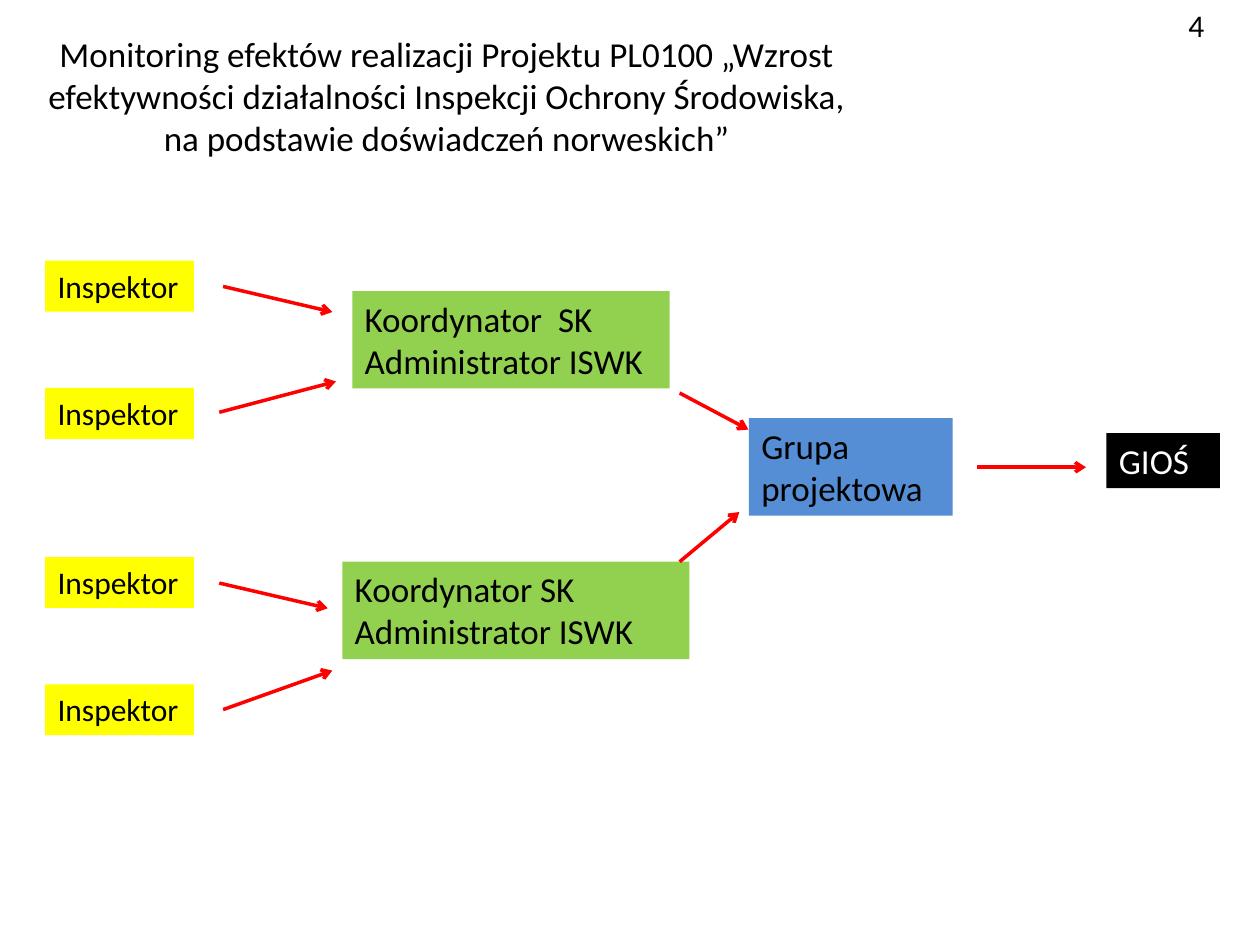
from dataclasses import dataclass

from lxml import etree
from pptx import Presentation
from pptx.dml.color import RGBColor
from pptx.enum.shapes import MSO_CONNECTOR, MSO_SHAPE
from pptx.enum.text import MSO_ANCHOR, MSO_AUTO_SIZE, PP_ALIGN
from pptx.oxml.ns import qn
from pptx.util import Pt

RECTANGLE = MSO_SHAPE.RECTANGLE
STRAIGHT = MSO_CONNECTOR.STRAIGHT
TOP = MSO_ANCHOR.TOP
GROW = MSO_AUTO_SIZE.SHAPE_TO_FIT_TEXT
LEFT, CENTER = PP_ALIGN.LEFT, PP_ALIGN.CENTER


@dataclass(frozen=True)
class Theme:
    font: str = "Calibri"
    large: int = 20
    small: int = 18
    arrow_width: int = 2
    black: str = "000000"
    white: str = "FFFFFF"
    inspector: str = "FFFF00"
    coordinator: str = "92D050"
    group: str = "558ED5"
    arrow: str = "FF0000"


THEME = Theme()


def write_lines(box, lines, size, color, align=LEFT):
    frame = box.text_frame
    frame.word_wrap = True
    frame.vertical_anchor = TOP
    frame.text = "\n".join(lines)
    for para in frame.paragraphs:
        para.alignment = align
        para.font.name = THEME.font
        para.font.size = Pt(size)
        para.font.color.rgb = RGBColor.from_string(color)


def add_label(page, bounds, text, size, align=LEFT):
    box = page.shapes.add_textbox(*map(Pt, bounds))
    write_lines(box, [text], size, THEME.black, align)


def add_role(page, bounds, lines, fill, size=THEME.large, color=THEME.black):
    box = page.shapes.add_shape(RECTANGLE, *map(Pt, bounds))
    box.shadow.inherit = False
    box.fill.solid()
    box.fill.fore_color.rgb = RGBColor.from_string(fill)
    box.line.fill.background()
    write_lines(box, lines, size, color)
    box.text_frame.auto_size = GROW


def add_arrow(page, start, end):
    arrow = page.shapes.add_connector(STRAIGHT, *map(Pt, (*start, *end)))
    arrow.line.width = Pt(THEME.arrow_width)
    arrow.line.color.rgb = RGBColor.from_string(THEME.arrow)
    etree.SubElement(arrow.line._get_or_add_ln(), qn("a:tailEnd"), type="arrow")
    etree.SubElement(arrow._element.spPr, qn("a:effectLst"))


def main():
    deck = Presentation()
    deck.slide_width, deck.slide_height = Pt(720), Pt(540)
    page = deck.slides.add_slide(deck.slide_layouts[6])

    # Title and page number
    add_label(
        page, (8.5, 15, 493.5, 102),
        "Monitoring efektów realizacji Projektu PL0100 „Wzrost efektywności "
        "działalności Inspekcji Ochrony Środowiska, na podstawie "
        "doświadczeń norweskich”",
        THEME.large, CENTER,
    )
    add_label(page, (672, 0, 48, 29), "4", THEME.small)

    # Two pairs of inspectors
    for pair_top in (149, 318.3):
        for top in (pair_top, pair_top + 72.7):
            add_role(page, (25.8, top, 85, 29.1), ["Inspektor"],
                     THEME.inspector, THEME.small)

    # Coordinators
    admin = "Administrator ISWK"
    add_role(page, (201.3, 166.3, 181.4, 55.7), ["Koordynator  SK", admin],
             THEME.coordinator)
    add_role(page, (195.6, 321, 198.4, 55.7), ["Koordynator SK", admin],
             THEME.coordinator)

    # Project group and chief inspectorate
    add_role(page, (428, 239, 116.4, 55.7), ["Grupa projektowa"], THEME.group)
    add_role(page, (632.3, 247.5, 64.8, 31.5), ["GIOŚ"], THEME.black,
             color=THEME.white)

    # Reporting flow
    arrows = [
        ((127.5, 163.7), (189.9, 178.3)),
        ((125.3, 235.6), (192, 218)),
        ((125.3, 333.2), (187.3, 347.6)),
        ((127.5, 405.5), (189.9, 383.2)),
        ((388.4, 224.6), (427.7, 245.5)),
        ((388.4, 321), (422.5, 292.6)),
        ((558.4, 267), (620.6, 267)),
    ]
    for start, end in arrows:
        add_arrow(page, start, end)

    deck.save("out.pptx")


if __name__ == "__main__":
    main()
